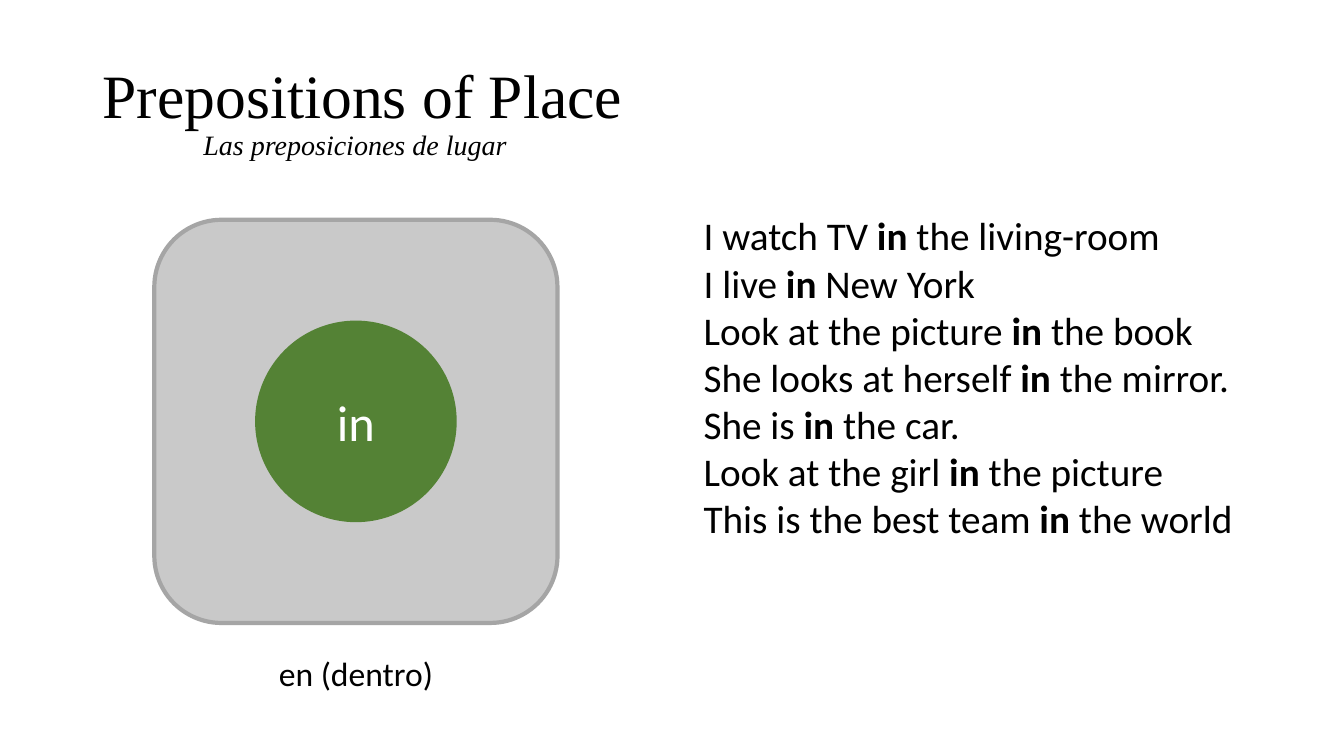
from dataclasses import dataclass

import pptx
import pptx.dml.color
import pptx.enum.shapes
import pptx.enum.text
import pptx.util
from lxml import etree
from pptx.oxml.ns import qn

Pt = pptx.util.Pt
RGB = pptx.dml.color.RGBColor.from_string
MSO_SHAPE = pptx.enum.shapes.MSO_SHAPE
PP_ALIGN = pptx.enum.text.PP_ALIGN
MSO_ANCHOR = pptx.enum.text.MSO_ANCHOR
MSO_AUTO_SIZE = pptx.enum.text.MSO_AUTO_SIZE


@dataclass(frozen=True)
class Theme:
    title_font: str = "Times New Roman"
    body_font: str = "Calibri"
    text: str = "000000"
    inverse: str = "FFFFFF"
    box_fill: str = "C9C9C9"
    box_line: str = "A5A5A5"
    ball_fill: str = "548235"
    title_size: int = 44
    subtitle_size: int = 20
    ball_size: int = 36
    example_size: int = 28
    caption_size: int = 24


THEME = Theme()
PREPOSITION = "in"
EXAMPLES = [
    ("I watch TV ", " the living-room"),
    ("I live ", " New York"),
    ("Look at the picture ", " the book"),
    ("She looks at herself ", " the mirror."),
    ("She is ", " the car."),
    ("Look at the girl ", " the picture"),
    ("This is the best team ", " the world"),
]


def add_run(p, text, size, font=THEME.body_font, color=THEME.text, bold=False, italic=False):
    r = p.add_run()
    r.text = text
    r.font.name = font
    r.font.size = Pt(size)
    r.font.bold = bold
    r.font.italic = italic
    r.font.color.rgb = RGB(color)


def add_tab_stop(p, position):
    tabs = etree.SubElement(p._p.get_or_add_pPr(), qn("a:tabLst"))
    etree.SubElement(tabs, qn("a:tab"), pos=str(position), algn="l")


def set_title(slide, title, subtitle):
    """Fill the title, with the subtitle tabbed in on a second line."""
    sp = slide.shapes.title
    sp.left, sp.top, sp.width, sp.height = Pt(66), Pt(28.75), Pt(828), Pt(104.4)
    tf = sp.text_frame
    tf.auto_size = MSO_AUTO_SIZE.NONE
    tf.vertical_anchor = MSO_ANCHOR.MIDDLE
    p = tf.paragraphs[0]
    p.alignment = PP_ALIGN.LEFT
    p.line_spacing = 0.9
    add_tab_stop(p, Pt(72))
    add_run(p, title, THEME.title_size, THEME.title_font)
    p.add_line_break()
    add_run(p, "\t" + subtitle, THEME.subtitle_size, THEME.title_font, italic=True)


def add_filled_shape(slide, kind, center, size, fill, line=None):
    """Add a square-sized shape around a center point."""
    x, y = center
    sp = slide.shapes.add_shape(kind, Pt(x - size / 2), Pt(y - size / 2), Pt(size), Pt(size))
    sp.shadow.inherit = False
    sp.fill.solid()
    sp.fill.fore_color.rgb = RGB(fill)
    if line:
        sp.line.color.rgb = RGB(line)
        sp.line.width = Pt(3)
    else:
        sp.line.fill.background()
    return sp


def add_text_frame(slide, left, top, width, height, wrap):
    tf = slide.shapes.add_textbox(Pt(left), Pt(top), Pt(width), Pt(height)).text_frame
    tf.word_wrap = wrap
    tf.auto_size = MSO_AUTO_SIZE.SHAPE_TO_FIT_TEXT
    return tf


def add_diagram(slide, center, word, caption):
    """Draw a ball inside a box, with the translation below."""
    add_filled_shape(slide, MSO_SHAPE.ROUNDED_RECTANGLE, center, 288,
                     THEME.box_fill, THEME.box_line)
    ball = add_filled_shape(slide, MSO_SHAPE.OVAL, center, 144, THEME.ball_fill)
    tf = ball.text_frame
    tf.vertical_anchor = MSO_ANCHOR.MIDDLE
    p = tf.paragraphs[0]
    p.alignment = PP_ALIGN.CENTER
    add_run(p, word, THEME.ball_size, color=THEME.inverse)

    width = 126
    tf = add_text_frame(slide, center[0] - width / 2, 463, width, 36, wrap=False)
    p = tf.paragraphs[0]
    p.alignment = PP_ALIGN.CENTER
    add_run(p, caption, THEME.caption_size)


def add_examples(slide, word, examples):
    tf = add_text_frame(slide, 495.5, 147.75, 398, 244.8, wrap=True)
    for i, (before, after) in enumerate(examples):
        p = tf.add_paragraph() if i else tf.paragraphs[0]
        p.alignment = PP_ALIGN.LEFT
        add_run(p, before, THEME.example_size)
        add_run(p, word, THEME.example_size, bold=True)
        add_run(p, after, THEME.example_size)


def main():
    prs = pptx.Presentation()
    prs.slide_width, prs.slide_height = Pt(960), Pt(540)
    slide = prs.slides.add_slide(prs.slide_layouts[5])
    set_title(slide, "Prepositions of Place", "Las preposiciones de lugar")
    add_diagram(slide, (254.25, 301), PREPOSITION, "en (dentro)")
    add_examples(slide, PREPOSITION, EXAMPLES)
    prs.save("out.pptx")


if __name__ == "__main__":
    main()
